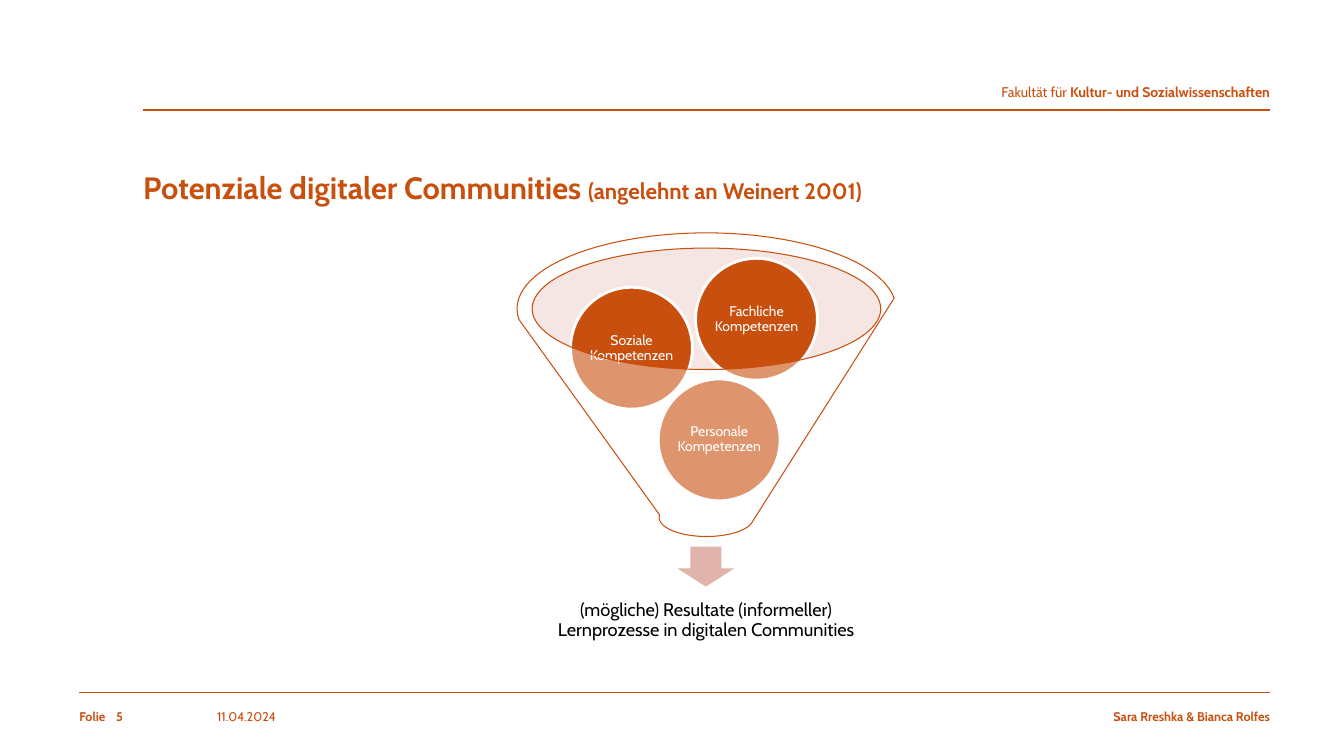
from lxml.etree import SubElement
from pptx import Presentation
from pptx.dml.color import RGBColor
from pptx.enum.shapes import MSO_CONNECTOR, MSO_SHAPE as SHP
from pptx.enum.text import MSO_ANCHOR, PP_ALIGN
from pptx.oxml.ns import qn
from pptx.util import Cm, Pt

COLORS = {
    "accent": "C84F0E",
    "mouth": "E6C2BD",
    "arrow": "E0B3AB",
    "white": "FFFFFF",
    "black": "000000",
}
FONT = "Cabin"


def rgb(name):
    return RGBColor.from_string(COLORS[name])


def write(tf, runs, color="accent", align=PP_ALIGN.LEFT,
          anchor=MSO_ANCHOR.TOP, inset=0, spacing=None):
    tf.word_wrap = True
    tf.vertical_anchor = anchor
    tf.margin_left = tf.margin_right = Cm(inset)
    tf.margin_top = tf.margin_bottom = Cm(inset)
    p = tf.paragraphs[0]
    p.alignment = align
    if spacing:
        p.line_spacing = spacing
    for text, size, bold in runs:
        r = p.add_run()
        r.text = text
        r.font.name = FONT
        r.font.size = Pt(size)
        r.font.bold = bold
        r.font.color.rgb = rgb(color)


def add_text(s, x, y, w, h, runs, **style):
    box = s.shapes.add_textbox(Cm(x), Cm(y), Cm(w), Cm(h))
    write(box.text_frame, runs, **style)


def add_rule(s, x, y, w):
    line = s.shapes.add_connector(MSO_CONNECTOR.STRAIGHT, Cm(x), Cm(y), Cm(x + w), Cm(y))
    line.line.color.rgb = rgb("accent")
    line.line.width = Pt(1)
    SubElement(line._element.spPr, qn("a:effectLst"))


def add_figure(s, kind, x, y, w, h, fill, line="accent", width=0.75, alpha=None):
    sp = s.shapes.add_shape(kind, Cm(x), Cm(y), Cm(w), Cm(h))
    sp.shadow.inherit = False
    sp.fill.solid()
    sp.fill.fore_color.rgb = rgb(fill)
    if alpha:
        clr = sp._element.spPr.find(qn("a:solidFill"))[0]
        SubElement(clr, qn("a:alpha"), val=str(alpha * 1000))
    if line:
        sp.line.color.rgb = rgb(line)
        sp.line.width = Pt(width)
    else:
        sp.line.fill.background()
    return sp


def add_header(s, x, y, w, h):
    add_rule(s, x, y + h, w)
    add_text(s, x, y, w, h, [
        ("Fakultät für ", 10, False),
        ("Kultur- und Sozialwissenschaften", 10, True),
    ], align=PP_ALIGN.RIGHT)


def add_title(s, x, y, w, h):
    title = s.shapes.title
    title.left, title.top, title.width, title.height = Cm(x), Cm(y), Cm(w), Cm(h)
    write(title.text_frame, [
        ("Potenziale digitaler Communities ", 22, True),
        ("(angelehnt an Weinert 2001)", 16, True),
    ])


def add_funnel(s, x, y, w, h):
    add_figure(s, SHP.OVAL, x + 0.36, y + 0.38, w - 0.74, 3.05,
               "mouth", line=None, alpha=40)
    add_figure(s, SHP.DOWN_ARROW, x + 3.91, y + h + 0.22, 1.7, 1.09,
               "arrow", line="white", width=2)
    add_text(s, x + 0.66, y + h + 1.09, 8.2, 2.06, [
        ("(mögliche) Resultate (informeller) Lernprozesse in digitalen Communities", 13, False),
    ], color="black", align=PP_ALIGN.CENTER, anchor=MSO_ANCHOR.MIDDLE, inset=0.25, spacing=0.9)
    skills = [
        ("Personale", 3.56, 3.68),
        ("Soziale", 1.35, 1.37),
        ("Fachliche", 4.5, 0.64),
    ]
    for skill, dx, dy in skills:
        ball = add_figure(s, SHP.OVAL, x + dx, y + dy, 3.07, 3.07,
                          "accent", line="white", width=2)
        write(ball.text_frame, [(f"{skill} Kompetenzen", 10, False)], color="white",
              align=PP_ALIGN.CENTER, anchor=MSO_ANCHOR.MIDDLE, inset=0.03, spacing=0.9)
    add_figure(s, SHP.FUNNEL, x, y, w, h, "white", alpha=40)


def add_footer(s, x, y, w, h):
    add_rule(s, x, y, w)
    top, height = y + 0.41, h - 0.41
    add_text(s, x, top, 0.9, height, [("Folie", 9, True)])
    add_text(s, x + 0.93, top, 1.55, height, [("5", 9, True)])
    add_text(s, x + 3.47, top, 3.45, height, [("11.04.2024", 9, False)])
    add_text(s, x + 8.08, top, w - 8.08, height,
             [("Sara Rreshka & Bianca Rolfes", 9, True)], align=PP_ALIGN.RIGHT)


def main():
    prs = Presentation()
    prs.slide_width, prs.slide_height = Cm(33.87), Cm(19.05)
    s = prs.slides.add_slide(prs.slide_layouts[5])
    add_header(s, 3.61, 2.11, 28.39, 0.66)
    add_title(s, 3.61, 4.24, 28.39, 1.09)
    add_funnel(s, 13.03, 5.87, 9.55, 7.65)
    add_footer(s, 2, 17.45, 30, 1.07)
    prs.save("out.pptx")


if __name__ == "__main__":
    main()
